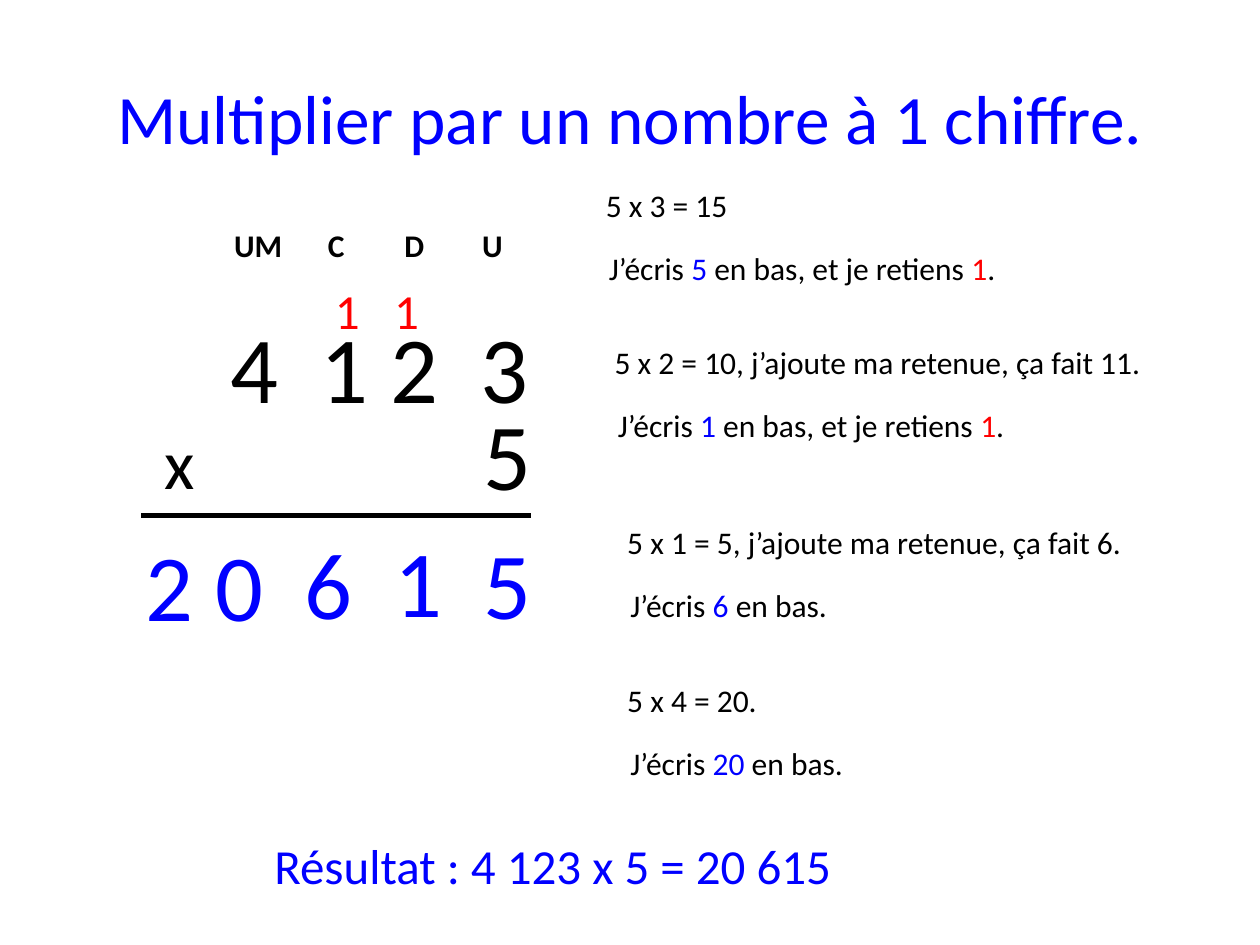
from lxml import etree
from pptx import Presentation
from pptx.dml.color import RGBColor
from pptx.enum.text import MSO_ANCHOR, MSO_AUTO_SIZE, PP_ALIGN
from pptx.oxml.ns import qn
from pptx.util import Inches, Pt

BLACK = RGBColor(0, 0, 0)
BLUE = RGBColor(0, 0, 255)
RED = RGBColor(255, 0, 0)
LEFT, CENTER, JUSTIFY = PP_ALIGN.LEFT, PP_ALIGN.CENTER, PP_ALIGN.JUSTIFY
MIDDLE = MSO_ANCHOR.MIDDLE
GROW = MSO_AUTO_SIZE.SHAPE_TO_FIT_TEXT
FONT = "Calibri"
NOTE, CARRY, SIGN, DIGIT = 18, 28, 40, 54
NO_STYLE = "{2D5ABB26-0587-4C30-8999-92F81FD0307C}"
COLUMN = 0.62
ROWS = (0.41, 0.57, 0.57, 0.79)
STEP_WIDTH = 4.9
STEP_GAP = 0.5
STEP_INDENT = 0.025


def add_span(para, text, size, color=BLACK, bold=False):
    span = para.add_run()
    span.text = text
    span.font.name = FONT
    span.font.size = Pt(size)
    span.font.bold = bold
    span.font.color.rgb = color
    return span


def add_text(page, area, spans, size, align=LEFT):
    box = page.shapes.add_textbox(*(Inches(length) for length in area))
    box.text_frame.word_wrap = True
    box.text_frame.auto_size = GROW
    para = box.text_frame.paragraphs[0]
    para.alignment = align
    for text, color in spans:
        add_span(para, text, size, color)
    return box


def add_title(page, text):
    box = add_text(page, (0.5, 0.3, 9, 1.25), [(text, BLUE)], 39.6, CENTER)
    box.text_frame.auto_size = MSO_AUTO_SIZE.NONE
    box.text_frame.vertical_anchor = MIDDLE


def add_rule(cell):
    line = etree.Element(qn("a:lnB"), w=str(Pt(3)))
    fill = etree.SubElement(line, qn("a:solidFill"))
    etree.SubElement(fill, qn("a:srgbClr"), val=str(BLACK))
    cell._tc.get_or_add_tcPr().insert(0, line)


def fill_cell(cell, text, size, bold):
    cell.vertical_anchor = MIDDLE
    para = cell.text_frame.paragraphs[0]
    para.alignment = CENTER
    add_span(para, text, size, BLACK, bold)


def add_place_table(page):
    frame = page.shapes.add_table(
        len(ROWS), 6, Inches(0.5), Inches(1.75), Inches(6 * COLUMN), Inches(sum(ROWS)))
    table = frame.table
    table._tbl.tblPr.find(qn("a:tableStyleId")).text = NO_STYLE
    table.first_row = table.horz_banding = False
    for column in table.columns:
        column.width = Inches(COLUMN)
    for row, height in zip(table.rows, ROWS):
        row.height = Inches(height)
        for cell in row.cells:
            cell.fill.background()
    for index, label in enumerate(("UM", "C", "D", "U"), start=2):
        fill_cell(table.cell(0, index), label, NOTE, True)
    fill_cell(table.cell(3, 1), "x", SIGN, False)
    for index in range(1, 6):
        add_rule(table.cell(3, index))


def add_factor(page):
    box = add_text(page, (1.73, 2.4, 3.07, 1.01), [], DIGIT)
    para = box.text_frame.paragraphs[0]
    for text, spacing in (("4", 0), (" ", 1220), ("1 2", 0), (" ", 1220), ("3", 0)):
        span = add_span(para, text, DIGIT)
        if spacing:
            span._r.get_or_add_rPr().set("spc", str(spacing))


def add_step(page, left, top, product, written, carried=None):
    add_text(page, (left, top, STEP_WIDTH, 0.4), [(product, BLACK)], NOTE, JUSTIFY)
    spans = [("J’écris ", BLACK), (written, BLUE)]
    if carried:
        spans += [(" en bas, et je retiens ", BLACK), (carried, RED), (".", BLACK)]
    else:
        spans.append((" en bas.", BLACK))
    area = (left + STEP_INDENT, top + STEP_GAP, STEP_WIDTH, 0.4)
    add_text(page, area, spans, NOTE)


def main():
    deck = Presentation()
    deck.slide_width, deck.slide_height = Inches(10), Inches(7.5)
    page = deck.slides.add_slide(deck.slide_layouts[6])
    add_title(page, "Multiplier par un nombre à 1 chiffre.")
    add_place_table(page)
    add_factor(page)
    for text, left, top, width, color in (
        ("5", 3.74, 3.09, 0.79, BLACK),
        ("5", 3.74, 4.12, 0.79, BLUE),
        ("1", 3.03, 4.1, 0.79, BLUE),
        ("6", 2.32, 4.12, 0.79, BLUE),
        ("2 0", 1.06, 4.13, 1.33, BLUE),
    ):
        add_text(page, (left, top, width, 1.01), [(text, color)], DIGIT)
    for left in (3.03, 2.56):
        add_text(page, (left, 2.18, 0.39, 0.57), [("1", RED)], CARRY)
    for step in (
        (4.71, 1.43, "5 x 3 = 15", "5", "1"),
        (4.78, 2.67, "5 x 2 = 10, j’ajoute ma retenue, ça fait 11.", "1", "1"),
        (4.88, 4.1, "5 x 1 = 5, j’ajoute ma retenue, ça fait 6.", "6"),
        (4.88, 5.36, "5 x 4 = 20.", "20"),
    ):
        add_step(page, *step)
    result = [("Résultat : 4 123 x 5 = 20 615", BLUE)]
    add_text(page, (2.08, 6.58, STEP_WIDTH, 0.57), result, CARRY)
    deck.save("out.pptx")


if __name__ == "__main__":
    main()
